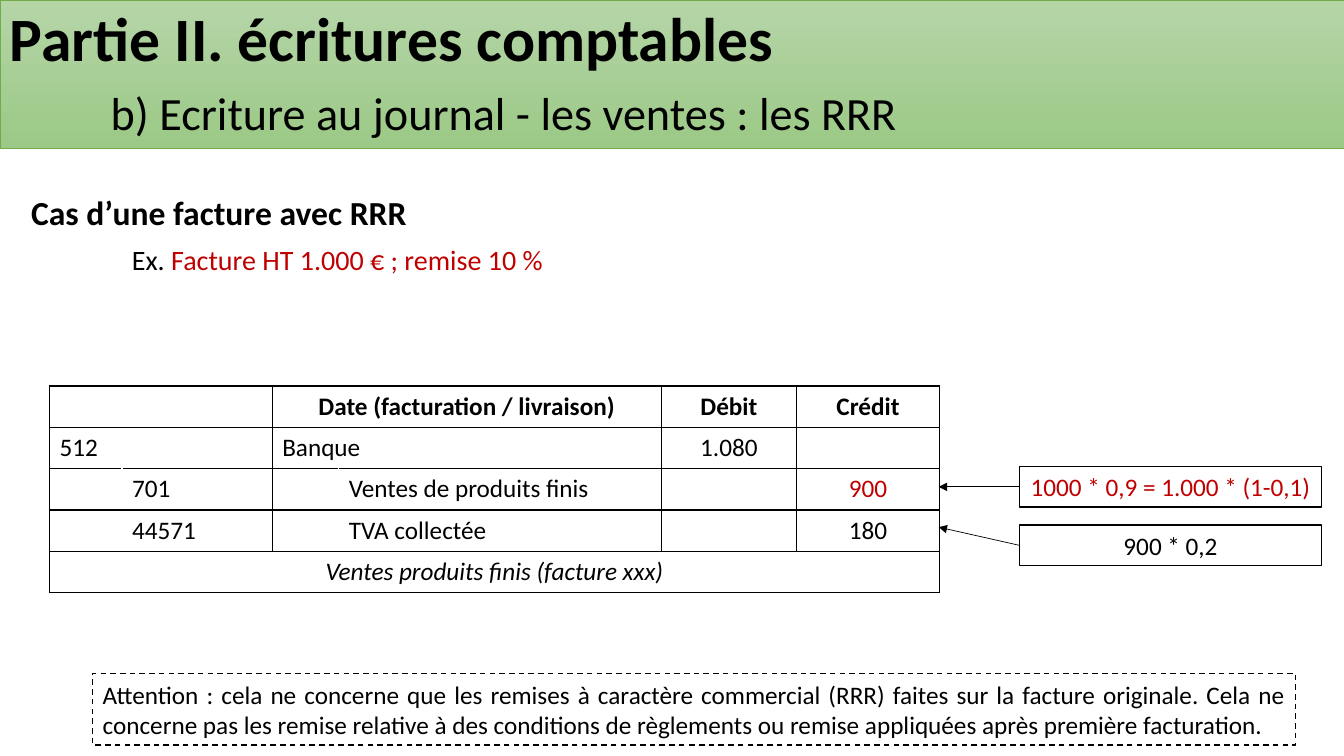
import pptx
import pptx.util
import pptx.dml.color
import pptx.enum.dml
import pptx.enum.shapes
import pptx.enum.text
import pptx.oxml.ns
import lxml.etree

Inches, Pt = pptx.util.Inches, pptx.util.Pt
ALIGN = pptx.enum.text.PP_ALIGN
qn = pptx.oxml.ns.qn


def rgb(value):
    return pptx.dml.color.RGBColor.from_string(value)


def style(run, size, color="000000", bold=False, italic=False):
    run.font.name = "Calibri"
    run.font.size = Pt(size)
    run.font.color.rgb = rgb(color)
    run.font.bold = bold
    run.font.italic = italic


deck = pptx.Presentation()
deck.slide_width, deck.slide_height = Inches(13.33), Inches(7.5)
slide = deck.slides.add_slide(deck.slide_layouts[6])
shapes = slide.shapes
RECTANGLE = pptx.enum.shapes.MSO_SHAPE.RECTANGLE

banner = shapes.add_shape(RECTANGLE, 0, 0, Inches(13.33), Inches(1.47))
banner.shadow.inherit = False
banner.fill.gradient()
banner.fill.gradient_angle = 270
for stop, color, position in zip(banner.fill.gradient_stops, ("B5D5A7", "9CC987"), (0, 1)):
    stop.color.rgb = rgb(color)
    stop.position = position
banner.line.color.rgb = rgb("70AD47")
banner.line.width = Pt(0.5)
banner.text_frame.word_wrap = True
banner.text_frame.text = "Partie II. écritures comptables\nb) Ecriture au journal - les ventes : les RRR"
part, section = banner.text_frame.paragraphs
for paragraph, size in ((part, 44), (section, 33)):
    paragraph.alignment = ALIGN.LEFT
    paragraph.line_spacing = 0.9
    style(paragraph.runs[0], size, bold=paragraph is part)
section.space_before = Pt(11)
section._p.get_or_add_pPr().set("marL", str(Inches(1)))

case = shapes.add_textbox(Inches(0.21), Inches(1.9), Inches(13.12), Inches(1))
case.text_frame.word_wrap = True
case.text_frame.text = "Cas d’une facture avec RRR\nEx. "
heading, example = case.text_frame.paragraphs
heading.line_spacing = example.line_spacing = 0.9
example.space_before = Pt(10)
example._p.get_or_add_pPr().set("marL", str(Inches(1)))
style(heading.runs[0], 24, bold=True)
style(example.runs[0], 20)
invoice = example.add_run()
invoice.text = "Facture HT 1.000 € ; remise 10 %"
style(invoice, 20, "C00000")

entries = [
    ["", "", "Date (facturation / livraison)", "", "Débit", "Crédit"],
    ["512", "", "Banque", "", "1.080", ""],
    ["", "701", "", "Ventes de produits finis", "", "900"],
    ["", "44571", "", "TVA collectée", "", "180"],
    ["Ventes produits finis (facture xxx)", "", "", "", "", ""],
]
widths = [0.72, 1.49, 0.66, 3.2, 1.34, 1.42]
row_height = 0.41
journal = shapes.add_table(len(entries), len(widths), Inches(0.49), Inches(3.83),
                           Inches(sum(widths)), Inches(row_height * len(entries))).table
journal.first_row = journal.horz_banding = False
for column, width in zip(journal.columns, widths):
    column.width = Inches(width)
for row in journal.rows:
    row.height = Inches(row_height)
for r in (0, 1):
    for c in (0, 2):
        journal.cell(r, c).merge(journal.cell(r, c + 1))
journal.cell(4, 0).merge(journal.cell(4, 5))

for r, entry in enumerate(entries):
    for c, text in enumerate(entry):
        cell = journal.cell(r, c)
        indented = r in (2, 3) and c < 4
        open_side = ("lnR" if c % 2 == 0 else "lnL") if indented else None
        properties = cell._tc.get_or_add_tcPr()
        for side in ("lnL", "lnR", "lnT", "lnB"):
            if side != open_side:
                border = lxml.etree.SubElement(properties, qn("a:" + side), w=str(Pt(1)))
                ink = lxml.etree.SubElement(border, qn("a:solidFill"))
                lxml.etree.SubElement(ink, qn("a:srgbClr"), val="000000")
        cell.fill.solid()
        cell.fill.fore_color.rgb = rgb("FFFFFF")
        if text:
            cell.text_frame.text = text
            line = cell.text_frame.paragraphs[0]
            line.alignment = ALIGN.CENTER if r in (0, 4) or c > 3 else ALIGN.LEFT
            style(line.runs[0], 18, "C00000" if text == "900" else "000000", r == 0, r == 4)

notes = [
    ("1000 * 0,9 = 1.000 * (1-0,1)", 10.11, 4.63, 3, 0.4, "C00000", 4.83),
    ("900 * 0,2", 10.11, 5.21, 3, 0.4, "000000", 5.23),
    ("Attention : cela ne concerne que les remises à caractère commercial (RRR) faites sur la "
     "facture originale. Cela ne concerne pas les remise relative à des conditions de règlements "
     "ou remise appliquées après première facturation.", 0.92, 6.68, 11.93, 0.71, "000000", None),
]
for text, left, top, width, height, color, target in notes:
    note = shapes.add_shape(RECTANGLE, Inches(left), Inches(top), Inches(width), Inches(height))
    note.shadow.inherit = False
    note.fill.solid()
    note.fill.fore_color.rgb = rgb("FFFFFF")
    note.line.color.rgb = rgb("000000")
    note.line.width = Pt(1)
    note.text_frame.word_wrap = target is None
    note.text_frame.text = text
    wording = note.text_frame.paragraphs[0]
    style(wording.runs[0], 18, color)
    if target is None:
        note.line.dash_style = pptx.enum.dml.MSO_LINE.DASH
        wording.alignment = ALIGN.JUSTIFY
        continue
    wording.alignment = ALIGN.CENTER
    arrow = shapes.add_connector(pptx.enum.shapes.MSO_CONNECTOR.STRAIGHT, Inches(left),
                                 Inches(top + height / 2), Inches(9.31), Inches(target))
    arrow.begin_connect(note, 1)
    arrow.line.color.rgb = rgb("000000")
    arrow.line.width = Pt(0.5)
    lxml.etree.SubElement(arrow.line._get_or_add_ln(), qn("a:tailEnd"), type="triangle")
    lxml.etree.SubElement(arrow._element.spPr, qn("a:effectLst"))

deck.save("out.pptx")
